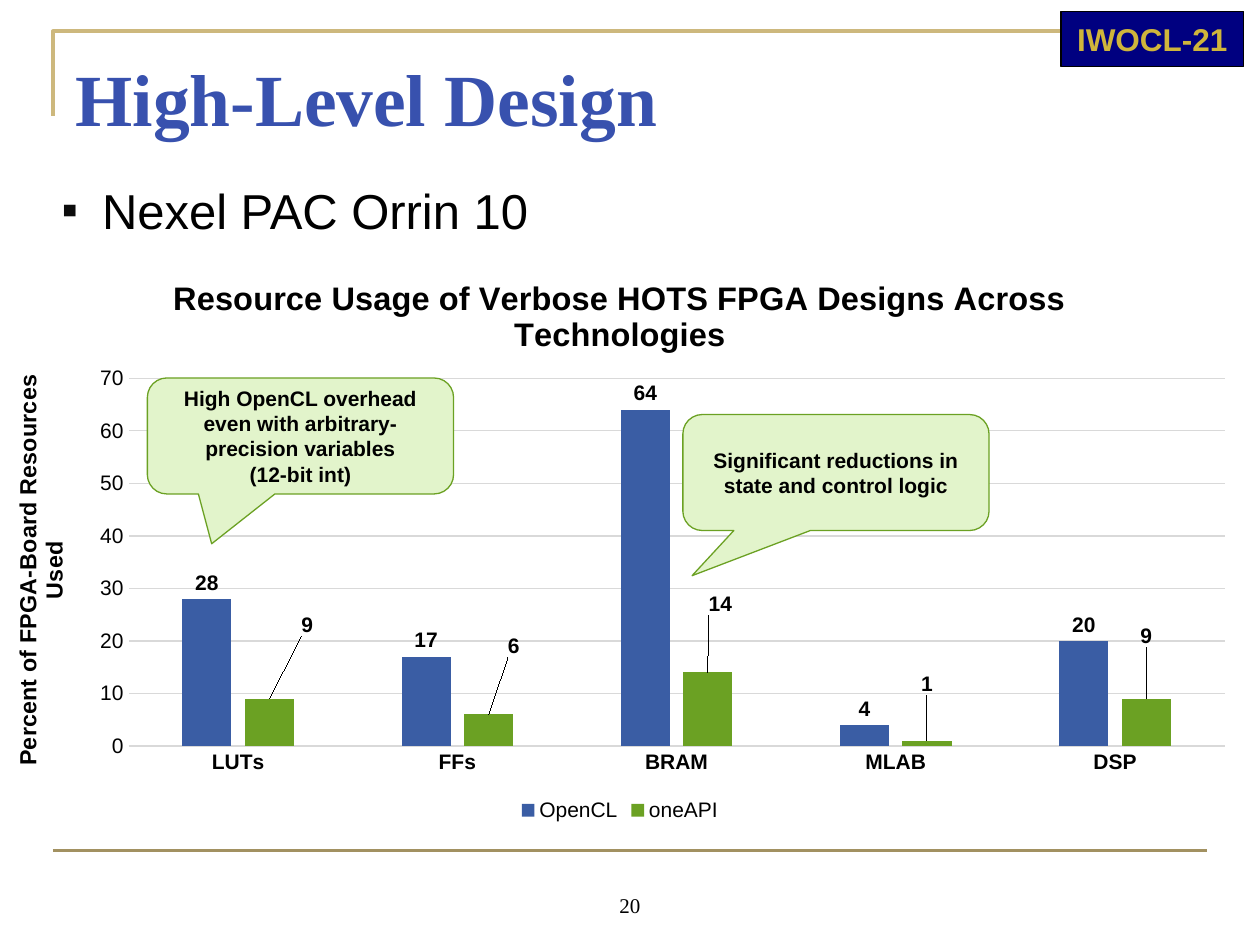
"""Build the High-Level Design slide with its resource usage chart."""
from dataclasses import dataclass

import lxml.etree
import pptx
import pptx.chart.data
import pptx.dml.color
import pptx.enum.chart
import pptx.enum.shapes
import pptx.enum.text
import pptx.oxml
import pptx.oxml.ns
import pptx.util
from pptx.util import Inches

ALIGN = pptx.enum.text.PP_ALIGN
ANCHOR = pptx.enum.text.MSO_ANCHOR
SHAPE = pptx.enum.shapes.MSO_SHAPE
BLACK, GREEN, GRID = "000000", "6BA123", "D9D9D9"


@dataclass
class Callout:
    left: float
    top: float
    lines: list[str]
    pointer: tuple[float, float]


@dataclass
class Series:
    name: str
    values: list[int]
    color: str
    label_shifts: list[tuple[float, float]]


CALLOUTS = [
    Callout(5.42, 3.29, ["Significant reductions in state and control logic"], (-0.47, 0.89)),
    Callout(1.17, 3, ["High OpenCL overhead even with arbitrary-precision variables", "(12-bit int)"],
            (-0.29, 0.93)),
]
CATEGORIES = ["LUTs", "FFs", "BRAM", "MLAB", "DSP"]
SERIES = [
    Series("OpenCL", [28, 17, 64, 4, 20], "3A5DA4", []),
    Series("oneAPI", [9, 6, 14, 1, 9], GREEN,
           [(0.03, -0.1), (0.02, -0.09), (0.01, -0.09), (0, -0.07), (0, -0.08)]),
]


def rgb(color: str) -> pptx.dml.color.RGBColor:
    return pptx.dml.color.RGBColor.from_string(color)


def set_font(font, size: float, color: str = BLACK, bold: bool = False, name: str = "Arial") -> None:
    font.size, font.bold, font.name = pptx.util.Pt(size), bold, name
    font.color.rgb = rgb(color)


def set_line(line, color: str, width: float) -> None:
    line.color.rgb = rgb(color)
    line.width = pptx.util.Pt(width)


def write(frame, lines: list[str], size: float, align=ALIGN.CENTER, anchor=ANCHOR.MIDDLE, **style) -> None:
    frame.word_wrap = True
    frame.vertical_anchor = anchor
    for index, text in enumerate(lines):
        para = frame.paragraphs[0] if index == 0 else frame.add_paragraph()
        para.alignment = align
        span = para.add_run()
        span.text = text
        set_font(span.font, size, **style)


def place(box, left: float, top: float, width: float, height: float) -> None:
    box.left, box.top, box.width, box.height = map(Inches, (left, top, width, height))


def add_box(page, kind, left: float, top: float, width: float, height: float, fill: str, line: str):
    box = page.shapes.add_shape(kind, *map(Inches, (left, top, width, height)))
    box.shadow.inherit = False
    box.fill.solid()
    box.fill.fore_color.rgb = rgb(fill)
    set_line(box.line, line, 0.75)
    return box


def add_frame(page) -> None:
    builder = page.shapes.build_freeform(Inches(0.42), Inches(0.92))
    builder.add_line_segments([(Inches(0.42), Inches(0.25)), (Inches(9.42), Inches(0.25))], close=False)
    corner = builder.convert_to_shape()
    corner.shadow.inherit = False
    corner.fill.background()
    set_line(corner.line, "CDB87D", 2.25)
    rule = page.shapes.add_connector(pptx.enum.shapes.MSO_CONNECTOR.STRAIGHT,
                                     Inches(0.42), Inches(6.75), Inches(9.58), Inches(6.75))
    set_line(rule.line, "A29161", 2.25)
    lxml.etree.SubElement(rule._element.spPr, pptx.oxml.ns.qn("a:effectLst"))
    badge = add_box(page, SHAPE.RECTANGLE, 8.42, 0.09, 1.45, 0.44, "000080", BLACK)
    write(badge.text_frame, ["IWOCL-21"], 18, color="CFB53B", bold=True)


def add_bullet(para) -> None:
    properties = para._p.get_or_add_pPr()
    properties.set("marL", str(Inches(0.38)))
    properties.set("indent", str(Inches(-0.32)))
    namespace = pptx.oxml.ns.nsdecls("a")
    for xml in (f'<a:buClr {namespace}><a:srgbClr val="0C0C0C"/></a:buClr>',
                f'<a:buSzPct {namespace} val="95000"/>',
                f'<a:buFont {namespace} typeface="Arial"/>',
                f'<a:buChar {namespace} char="▪"/>'):
        properties.append(pptx.oxml.parse_xml(xml))
    para.space_before = pptx.util.Pt(0)


def manual_layout(**values):
    parts = "".join(f'<c:{key} val="{value}"/>' for key, value in values.items())
    return pptx.oxml.parse_xml(f'<c:layout {pptx.oxml.ns.nsdecls("c")}>'
                               f"<c:manualLayout>{parts}</c:manualLayout></c:layout>")


def set_title(owner, text: str, size: float) -> None:
    frame = owner.text_frame
    frame.text = text
    set_font(frame.paragraphs[0].runs[0].font, size, bold=True)


def style_series(series, entry: Series) -> None:
    series.format.fill.solid()
    series.format.fill.fore_color.rgb = rgb(entry.color)
    series.invert_if_negative = False
    labels = series.data_labels
    labels.show_value = True
    labels.position = pptx.enum.chart.XL_LABEL_POSITION.OUTSIDE_END
    set_font(labels.font, 12, bold=True)
    for index, (across, down) in enumerate(entry.label_shifts):
        label = series.points[index].data_label
        set_font(label.font, 12, bold=True)
        label.position = pptx.enum.chart.XL_LABEL_POSITION.OUTSIDE_END
    for node, (across, down) in zip(series._element.xpath("c:dLbls/c:dLbl"), entry.label_shifts):
        node.insert(1, manual_layout(x=across, y=down))


def add_usage_chart(page) -> None:
    data = pptx.chart.data.CategoryChartData(number_format="General")
    data.categories = CATEGORIES
    for entry in SERIES:
        data.add_series(entry.name, entry.values)
    chart = page.shapes.add_chart(pptx.enum.chart.XL_CHART_TYPE.COLUMN_CLUSTERED,
                                  *map(Inches, (-0.08, 2, 10, 4.56)), data).chart
    set_font(chart.font, 10)
    chart.has_title = True
    set_title(chart.chart_title, "Resource Usage of Verbose HOTS FPGA Designs Across Technologies", 18.62)
    chart.has_legend = True
    chart.legend.position = pptx.enum.chart.XL_LEGEND_POSITION.BOTTOM
    chart.legend.include_in_layout = False
    set_font(chart.legend.font, 12)
    plot = chart.plots[0]
    plot.gap_width, plot.overlap, plot.vary_by_categories = 219, -27, False
    for series, entry in zip(plot.series, SERIES):
        style_series(series, entry)
    for axis, bold in ((chart.category_axis, True), (chart.value_axis, False)):
        axis.major_tick_mark = axis.minor_tick_mark = pptx.enum.chart.XL_TICK_MARK.NONE
        set_font(axis.tick_labels.font, 12, bold=bold)
    set_line(chart.category_axis.format.line, GRID, 0.75)
    values = chart.value_axis
    values.minimum_scale, values.maximum_scale, values.major_unit = 0, 70, 10
    values.tick_labels.number_format = "#,##0"
    values.tick_labels.number_format_is_linked = False
    values.format.line.fill.background()
    set_line(values.major_gridlines.format.line, GRID, 0.75)
    set_title(values.axis_title, "Percent of FPGA-Board Resources Used", 13.3)
    area = chart._chartSpace.chart.plotArea
    for old in area.xpath("c:layout"):
        area.remove(old)
    area.insert(0, manual_layout(layoutTarget="inner", xMode="edge", yMode="edge",
                                 x=0.11, y=0.22, w=0.87, h=0.64))


def add_callout(page, callout: Callout) -> None:
    box = add_box(page, SHAPE.ROUNDED_RECTANGULAR_CALLOUT, callout.left, callout.top, 2.43, 0.92,
                  "E2F4CB", GREEN)
    box.adjustments[0], box.adjustments[1] = callout.pointer
    write(box.text_frame, callout.lines, 12, bold=True)


def main() -> None:
    deck = pptx.Presentation()
    deck.slide_width, deck.slide_height = Inches(10), Inches(7.5)
    page = deck.slides.add_slide(deck.slide_layouts[1])
    add_frame(page)
    title, body = page.shapes.title, page.placeholders[1]
    place(title, 0.5, 0.3, 9, 1.03)
    title.text_frame.margin_top = Inches(0.12)
    write(title.text_frame, ["High-Level Design"], 42, ALIGN.LEFT, ANCHOR.TOP,
          color="3851AE", bold=True, name="Times New Roman")
    place(body, 0.33, 1.33, 9.33, 5.37)
    body.text_frame.margin_top = Inches(0.1)
    add_bullet(body.text_frame.paragraphs[0])
    write(body.text_frame, ["Nexel PAC Orrin 10"], 28, ALIGN.LEFT, ANCHOR.TOP)
    number = page.shapes.add_textbox(*map(Inches, (4, 6.83, 2, 0.5)))
    write(number.text_frame, ["20"], 12, anchor=ANCHOR.BOTTOM, name="Times New Roman")
    add_usage_chart(page)
    for callout in CALLOUTS:
        add_callout(page, callout)
    deck.save("out.pptx")


if __name__ == "__main__":
    main()
